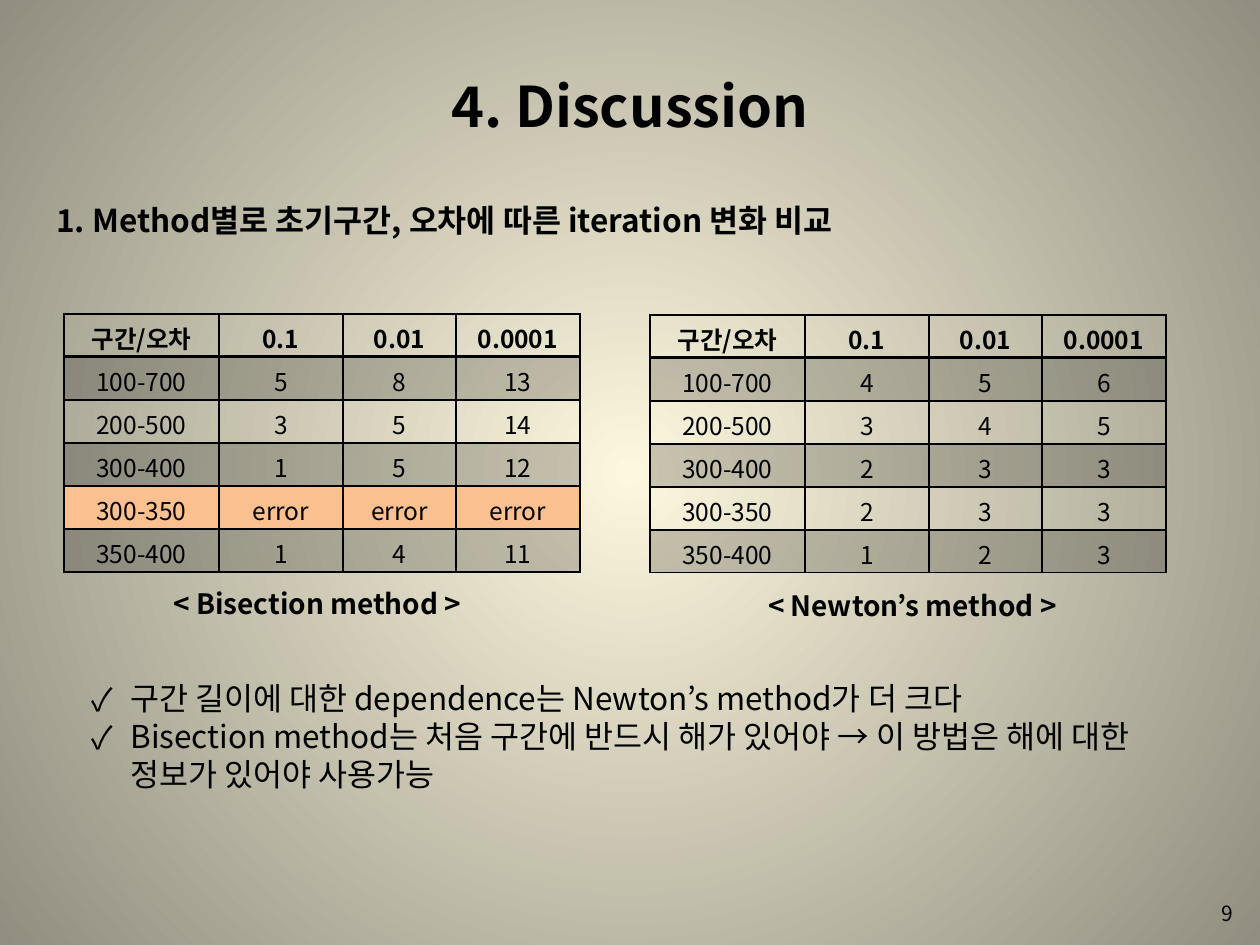
import pptx
import pptx.dml.color
import pptx.enum.text
import pptx.oxml
import pptx.oxml.ns
import pptx.util
from lxml import etree

RGBColor = pptx.dml.color.RGBColor
ALIGN = pptx.enum.text.PP_ALIGN
ANCHOR = pptx.enum.text.MSO_ANCHOR
qn = pptx.oxml.ns.qn

FONT = "Noto Sans CJK KR"
BLACK = RGBColor(0x00, 0x00, 0x00)
ORANGE = RGBColor(0xFA, 0xC0, 0x90)
CREAM = RGBColor(0xFC, 0xF7, 0xDD)
TAUPE = RGBColor(0x91, 0x8E, 0x81)
BAND_ALPHA = 20000

COL_WIDTHS = [155, 124, 113, 124]
ROW_HEIGHT = 43
HEADER = ["구간/오차", "0.1", "0.01", "0.0001"]
INTERVALS = ["100-700", "200-500", "300-400", "300-350", "350-400"]
BISECTION = [[5, 8, 13], [3, 5, 14], [1, 5, 12], ["error"] * 3, [1, 4, 11]]
NEWTON = [[4, 5, 6], [3, 4, 5], [2, 3, 3], [2, 3, 3], [1, 2, 3]]
FINDINGS = [
    "구간 길이에 대한 dependence는 Newton’s method가 더 크다",
    "Bisection method는 처음 구간에 반드시 해가 있어야 → "
    "이 방법은 해에 대한 정보가 있어야 사용가능",
]


def px(n):
    return pptx.util.Emu(round(n * 914400 / 126))


def set_background(slide):
    """Fill the slide with a gradient radiating from its centre."""
    bg = pptx.oxml.parse_xml(
        f'<p:bg {pptx.oxml.ns.nsdecls("p", "a")}><p:bgPr>'
        '<a:gradFill rotWithShape="1"><a:gsLst>'
        f'<a:gs pos="0"><a:srgbClr val="{CREAM}"/></a:gs>'
        f'<a:gs pos="100000"><a:srgbClr val="{TAUPE}"/></a:gs></a:gsLst>'
        '<a:path path="circle"><a:fillToRect l="50000" t="50000" r="50000" b="50000"/>'
        '</a:path></a:gradFill><a:effectLst/></p:bgPr></p:bg>')
    slide.element.cSld.insert(0, bg)


def add_run(p, text, size, bold=False):
    r = p.add_run()
    r.text = text
    r.font.size = pptx.util.Pt(size)
    r.font.bold = bold
    r.font.name = FONT
    r.font.color.rgb = BLACK
    etree.SubElement(r.font._element, qn("a:ea"), typeface=FONT)


def add_text(slide, box, lines, size, bold=False, align=ALIGN.LEFT,
             anchor=ANCHOR.TOP, bullet=None):
    tf = slide.shapes.add_textbox(*map(px, box)).text_frame
    tf.word_wrap = True
    tf.vertical_anchor = anchor
    for i, line in enumerate(lines):
        p = tf.paragraphs[0] if i == 0 else tf.add_paragraph()
        p.alignment = align
        if bullet:
            add_bullet(p, bullet)
        add_run(p, line, size, bold)


def add_bullet(p, char):
    pPr = p._p.get_or_add_pPr()
    pPr.set("marL", str(px(39)))
    pPr.set("indent", str(-px(39)))
    etree.SubElement(pPr, qn("a:buFont"), typeface=FONT)
    etree.SubElement(pPr, qn("a:buChar"), char=char)


def set_borders(cell, top, bottom):
    tcPr = cell._tc.get_or_add_tcPr()
    for side, width in (("L", 1), ("R", 1), ("T", top), ("B", bottom)):
        ln = etree.SubElement(tcPr, qn(f"a:ln{side}"), w=str(pptx.util.Pt(width)))
        fill = etree.SubElement(ln, qn("a:solidFill"))
        etree.SubElement(fill, qn("a:srgbClr"), val=str(BLACK))


def fill_cell(cell, row, highlighted):
    if highlighted:
        cell.fill.solid()
        cell.fill.fore_color.rgb = ORANGE
    elif row % 2:
        cell.fill.solid()
        cell.fill.fore_color.rgb = BLACK
        color = cell._tc.tcPr.find(qn("a:solidFill"))[0]
        etree.SubElement(color, qn("a:alpha"), val=str(BAND_ALPHA))
    else:
        cell.fill.background()


def add_iteration_table(slide, left, top, counts):
    rows = [HEADER] + [[name, *vals] for name, vals in zip(INTERVALS, counts)]
    frame = slide.shapes.add_table(
        len(rows), len(HEADER), px(left), px(top),
        px(sum(COL_WIDTHS)), px(ROW_HEIGHT * len(rows)))
    table = frame.table
    table.horz_banding = False
    for column, width in zip(table.columns, COL_WIDTHS):
        column.width = px(width)
    for i, values in enumerate(rows):
        table.rows[i].height = px(ROW_HEIGHT)
        for j, value in enumerate(values):
            cell = table.cell(i, j)
            cell.margin_top, cell.margin_bottom = px(6), 0
            p = cell.text_frame.paragraphs[0]
            p.alignment = ALIGN.CENTER
            add_run(p, str(value), 14, bold=i == 0)
            # The rule under the header is heavier
            set_borders(cell, 2 if i == 1 else 1, 2 if i == 0 else 1)
            fill_cell(cell, i, "error" in values)


def main():
    prs = pptx.Presentation()
    prs.slide_width, prs.slide_height = px(1260), px(945)
    slide = prs.slides.add_slide(prs.slide_layouts[6])
    set_background(slide)

    # Page number, title and heading
    add_text(slide, (951, 888, 294, 50), ["9"], 12,
             align=ALIGN.RIGHT, anchor=ANCHOR.MIDDLE)
    add_text(slide, (63, 26, 1134, 158), ["4. Discussion"], 32, bold=True,
             align=ALIGN.CENTER, anchor=ANCHOR.MIDDLE)
    add_text(slide, (44, 195, 1153, 50),
             ["1. Method별로 초기구간, 오차에 따른 iteration 변화 비교"], 18, bold=True)

    # Iteration counts with captions
    add_iteration_table(slide, 64, 314, BISECTION)
    add_text(slide, (15, 580, 605, 46), ["< Bisection method >"], 16,
             bold=True, align=ALIGN.CENTER)
    add_iteration_table(slide, 650, 315, NEWTON)
    add_text(slide, (610, 582, 605, 46), ["< Newton’s method >"], 16,
             bold=True, align=ALIGN.CENTER)

    # Findings
    add_text(slide, (79, 673, 1126, 127), FINDINGS, 18, bullet="✓")

    prs.save("out.pptx")


if __name__ == "__main__":
    main()
